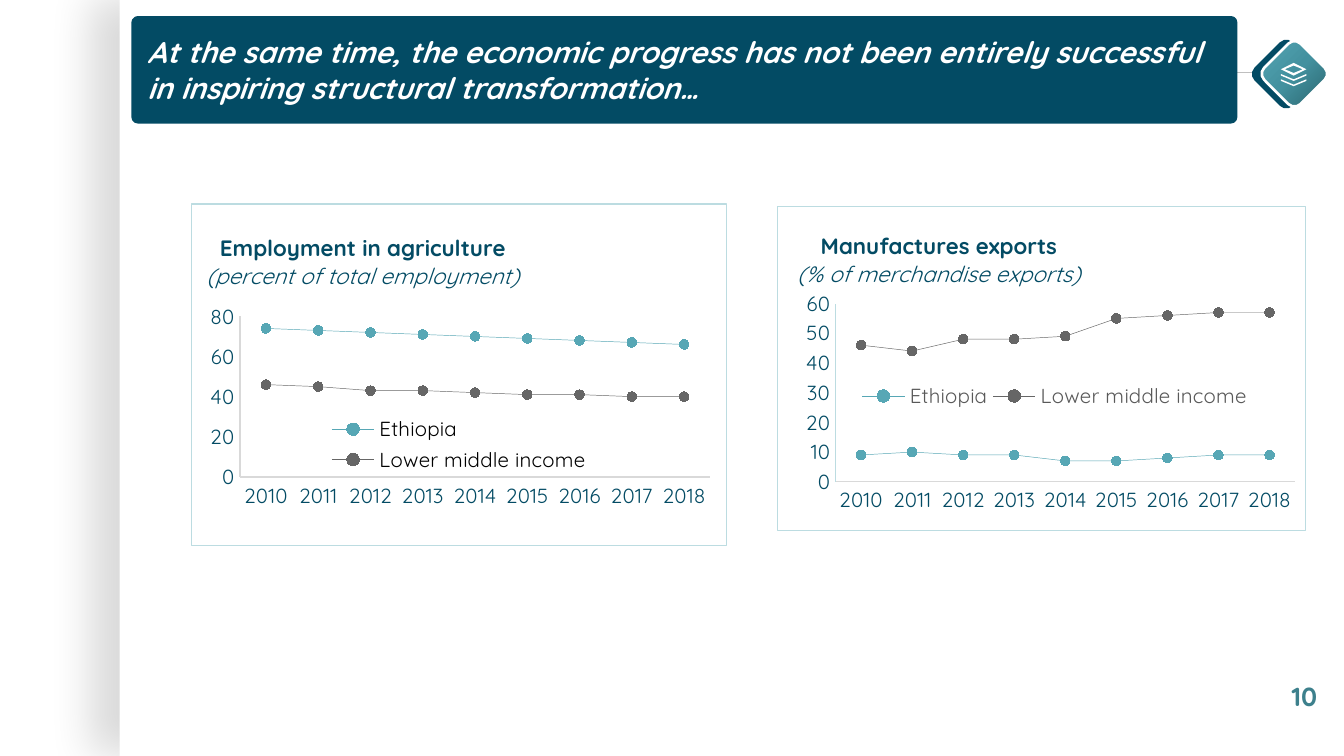
from lxml import etree
from pptx import Presentation
from pptx.chart.data import CategoryChartData
from pptx.dml.color import RGBColor
from pptx.enum.chart import XL_CHART_TYPE, XL_LEGEND_POSITION, XL_MARKER_STYLE, XL_TICK_MARK
from pptx.enum.shapes import MSO_CONNECTOR, MSO_SHAPE
from pptx.enum.text import MSO_ANCHOR, PP_ALIGN
from pptx.oxml import parse_xml
from pptx.oxml.ns import nsdecls, qn
from pptx.util import Cm, Pt

LINES = XL_CHART_TYPE.LINE_MARKERS
BOTTOM, TOP = XL_LEGEND_POSITION.BOTTOM, XL_LEGEND_POSITION.TOP
CIRCLE = XL_MARKER_STYLE.CIRCLE
NO_TICK = XL_TICK_MARK.NONE
RECT, ROUND = MSO_SHAPE.RECTANGLE, MSO_SHAPE.ROUNDED_RECTANGLE
STRAIGHT = MSO_CONNECTOR.STRAIGHT
MIDDLE, LEFT = MSO_ANCHOR.MIDDLE, PP_ALIGN.LEFT

NAVY = RGBColor(0x03, 0x4B, 0x64)
TEAL = RGBColor(0x57, 0xA7, 0xB5)
DEEP = RGBColor(0x3D, 0x80, 0x8C)
PALE = RGBColor(0xBC, 0xDC, 0xE1)
GRAY = RGBColor(0x66, 0x66, 0x66)
SLATE = RGBColor(0x59, 0x59, 0x59)
SILVER = RGBColor(0xBF, 0xBF, 0xBF)
MIST = RGBColor(0xD9, 0xD9, 0xD9)
BLACK = RGBColor(0, 0, 0)
WHITE = RGBColor(0xFF, 0xFF, 0xFF)

FONT = "Quicksand"
YEARS = [str(year) for year in range(2010, 2019)]


def style(font, size, color, bold=False, italic=False, name=FONT):
    font.name, font.size = name, Pt(size)
    font.bold, font.italic = bold, italic
    font.color.rgb = color


def paint(shape, fill, line=None, width=0.75):
    shape.shadow.inherit = False
    shape.fill.solid()
    shape.fill.fore_color.rgb = fill
    if line is None:
        shape.line.fill.background()
    else:
        shape.line.color.rgb = line
        shape.line.width = Pt(width)


def add_box(slide, kind, box, fill, line=None, width=0.75):
    shape = slide.shapes.add_shape(kind, *map(Cm, box))
    paint(shape, fill, line, width)
    return shape


def add_page(slide):
    page = add_box(slide, RECT, (2.26, 0, 23.14, 14.29), WHITE)
    glow = page.element.spPr.find(qn("a:effectLst"))
    glow.append(parse_xml(
        f'<a:outerShdw {nsdecls("a")} blurRad="{Pt(22.5)}" dist="{Pt(15)}" '
        'dir="10800000" algn="r" rotWithShape="0"><a:srgbClr val="000000">'
        '<a:alpha val="15000"/></a:srgbClr></a:outerShdw>'))


def add_line(slide, start, end, color):
    line = slide.shapes.add_connector(STRAIGHT, *map(Cm, start + end))
    line.line.color.rgb = color
    line.line.width = Pt(0.75)
    etree.SubElement(line.element.spPr, qn("a:effectLst"))


def add_head(slide, text):
    head = add_box(slide, ROUND, (2.51, 0.33, 20.85, 1.98), NAVY, NAVY, 1.5)
    head.adjustments[0] = 0.05
    frame = head.text_frame
    frame.word_wrap = True
    frame.vertical_anchor = MIDDLE
    para = frame.paragraphs[0]
    para.text, para.alignment = text, LEFT
    style(para.font, 16, WHITE, True, True)


def add_page_no(slide, text):
    box = slide.shapes.add_textbox(Cm(24.16), Cm(12.73), Cm(1.07), Cm(0.86))
    box.text_frame.word_wrap = False
    para = box.text_frame.paragraphs[0]
    para.text = text
    style(para.font, 14, DEEP, True)


def add_form(slide, loops):
    first, *rest = [[(Cm(x), Cm(y)) for x, y in loop] for loop in loops]
    form = slide.shapes.build_freeform(*first[0], scale=1.0)
    form.add_line_segments(first[1:], close=True)
    for loop in rest:
        form.move_to(*loop[0])
        form.add_line_segments(loop[1:], close=True)
    paint(form.convert_to_shape(), WHITE)


def add_icon(slide):
    # Two tilted tiles, the front one shaded
    back = add_box(slide, ROUND, (23.8, 0.89, 1.02, 1.02), NAVY)
    front = add_box(slide, ROUND, (23.98, 0.91, 0.97, 0.97), TEAL, WHITE, 1.42)
    back.rotation = front.rotation = 315
    stops = ((0, "2F666F"), (26, "377B86"), (50, "43919F"), (100, "57A7B5"))
    marks = "".join(f'<a:gs pos="{pos * 1000}"><a:srgbClr val="{color}"/></a:gs>'
                    for pos, color in stops)
    props = front.element.spPr
    props.replace(props.find(qn("a:solidFill")), parse_xml(
        f'<a:gradFill {nsdecls("a")}><a:gsLst>{marks}</a:gsLst><a:path path="circle">'
        '<a:fillToRect l="100000" t="100000"/></a:path></a:gradFill>'))

    # Stacked layers: a hollow diamond over two chevrons
    mid, top, half = 24.45, 1.31, 0.24
    add_form(slide, [[(mid, top - h), (mid + w, top), (mid, top + h), (mid - w, top)]
                     for w, h in ((half, 0.12), (0.17, 0.07))])
    for y in (1.5, 1.4):
        add_form(slide, [[(mid - half, y), (mid, y + 0.1), (mid + half, y),
                          (mid + half, y + 0.03), (mid, y + 0.13),
                          (mid - half, y + 0.03)]])


def place(chart, tag, index, spots, inner=False):
    """Fix a chart part at x, y (and w, h) as shares of the chart."""
    part = chart.element.find(".//" + qn(tag))
    old = part.find(qn("c:layout"))
    if old is not None:
        part.remove(old)
    target = '<c:layoutTarget val="inner"/>' if inner else ""
    modes = '<c:xMode val="edge"/><c:yMode val="edge"/>'
    sizes = "".join(f'<c:{key} val="{val}"/>' for key, val in zip("xywh", spots))
    part.insert(index, parse_xml(
        f'<c:layout {nsdecls("c")}><c:manualLayout>{target}{modes}{sizes}'
        '</c:manualLayout></c:layout>'))


def set_axis(axis, color):
    axis.has_major_gridlines = False
    axis.major_tick_mark = axis.minor_tick_mark = NO_TICK
    axis.format.line.color.rgb = color
    axis.format.line.width = Pt(0.75)
    style(axis.tick_labels.font, 11, NAVY)


def add_chart(slide, box, title, rows, scale, edge, key, spots):
    data = CategoryChartData(number_format="0")
    data.categories = YEARS
    for name, vals in zip(("Ethiopia", "Lower middle income"), rows):
        data.add_series(name, vals)
    chart = slide.shapes.add_chart(LINES, *map(Cm, box), data).chart
    style(chart.font, 11, BLACK, name="Karla")

    # Title: bold name, italic unit
    chart.has_title = True
    frame = chart.chart_title.text_frame
    frame.text = "\n".join(title)
    for para, bold in zip(frame.paragraphs, (True, False)):
        style(para.font, 12, NAVY, bold, not bold)

    # Axes
    set_axis(chart.category_axis, MIST)
    axis = chart.value_axis
    set_axis(axis, edge)
    axis.minimum_scale = 0
    axis.maximum_scale, axis.major_unit = scale

    # Series
    chart.plots[0].vary_by_categories = False
    for row, color in zip(chart.plots[0].series, (TEAL, GRAY)):
        row.smooth = False
        row.format.line.color.rgb = color
        row.format.line.width = Pt(0.25)
        row.marker.style, row.marker.size = CIRCLE, 5
        row.marker.format.fill.solid()
        row.marker.format.fill.fore_color.rgb = color
        row.marker.format.line.color.rgb = WHITE

    # Legend, layout and border
    chart.has_legend = True
    chart.legend.position, color = key
    chart.legend.include_in_layout = False
    style(chart.legend.font, 11, color)
    head, plot, legend = spots
    place(chart, "c:title", 1, head)
    place(chart, "c:plotArea", 0, plot, True)
    place(chart, "c:legend", 1, legend)
    chart.element.find(qn("c:chart")).addnext(parse_xml(
        f'<c:spPr {nsdecls("c", "a")}><a:noFill/><a:ln w="{Pt(0.75)}"><a:solidFill>'
        f'<a:srgbClr val="{PALE}"/></a:solidFill></a:ln></c:spPr>'))


def main():
    deck = Presentation()
    deck.slide_width, deck.slide_height = Cm(25.4), Cm(14.29)
    slide = deck.slides.add_slide(deck.slide_layouts[6])

    add_page(slide)
    add_chart(slide, (14.68, 3.89, 10.01, 6.15),
              ("Manufactures exports", "(% of merchandise exports)"),
              ((9, 10, 9, 9, 7, 7, 8, 9, 9), (46, 44, 48, 48, 49, 55, 56, 57, 57)),
              (60, 10), PALE, (BOTTOM, SLATE),
              ((0.03, 0.06), (0.11, 0.3, 0.87, 0.55), (0.15, 0.54, 0.75, 0.09)))
    add_line(slide, (22.38, 1.37), (24.41, 1.37), SILVER)
    add_head(slide, "At the same time, the economic progress has not been entirely "
                    "successful in inspiring structural transformation…")
    add_page_no(slide, "10")
    add_chart(slide, (3.61, 3.84, 10.13, 6.48),
              ("Employment in agriculture", "(percent of total employment)"),
              ((74, 73, 72, 71, 70, 69, 68, 67, 66), (46, 45, 43, 43, 42, 41, 41, 40, 40)),
              (80, 20), MIST, (TOP, BLACK),
              ((0.02, 0.07), (0.09, 0.33, 0.88, 0.47), (0.25, 0.61, 0.5, 0.19)))
    add_icon(slide)
    deck.save("out.pptx")


if __name__ == "__main__":
    main()
